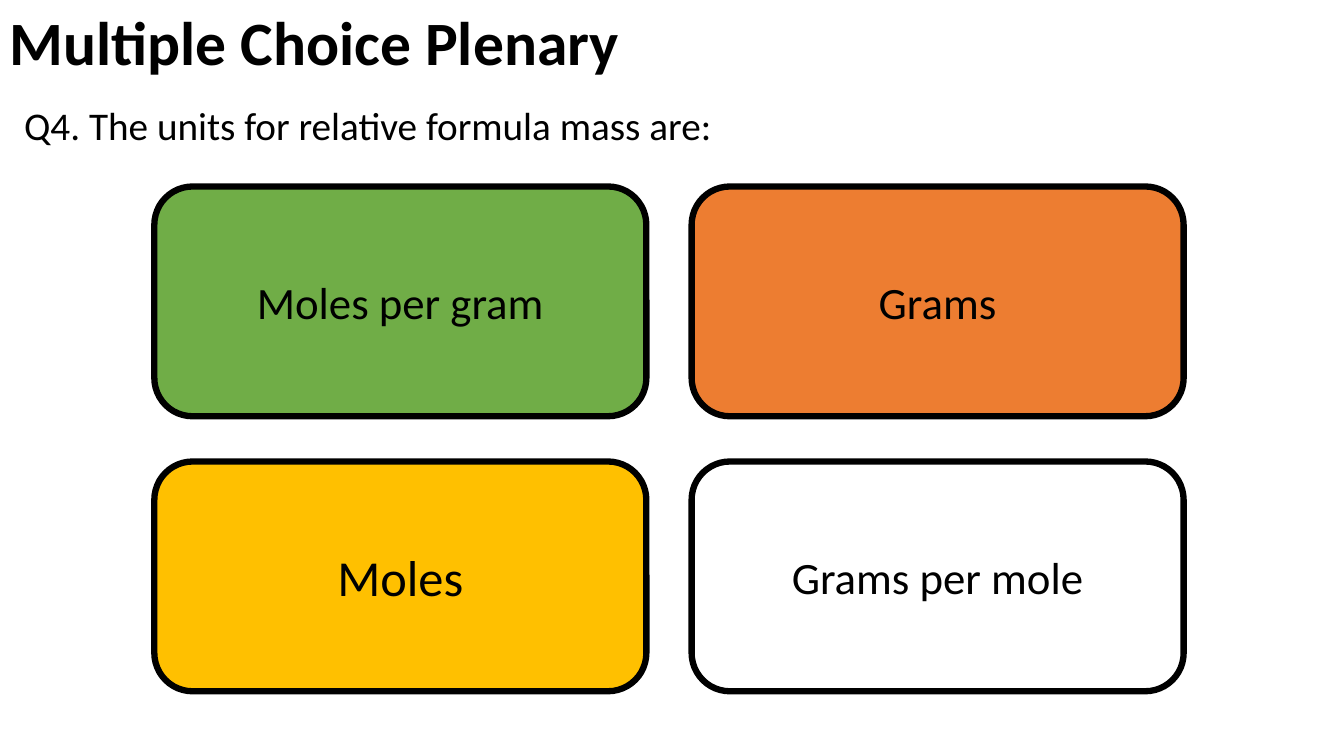
from pptx import Presentation
from pptx.dml.color import RGBColor
from pptx.enum.shapes import MSO_SHAPE
from pptx.enum.text import MSO_ANCHOR, PP_ALIGN
from pptx.util import Cm, Pt

BLACK = RGBColor(0x00, 0x00, 0x00)
WHITE = RGBColor(0xFF, 0xFF, 0xFF)
GREEN = RGBColor(0x70, 0xAD, 0x47)
ORANGE = RGBColor(0xED, 0x7D, 0x31)
GOLD = RGBColor(0xFF, 0xC0, 0x00)

LEFT, TOP = 3.89, 4.7
WIDTH, HEIGHT = 12.4, 5.79
STEP_X, STEP_Y = 13.54, 6.93

ANSWERS = [
    ("Moles per gram", GREEN, 32),
    ("Grams", ORANGE, 32),
    ("Moles", GOLD, 36),
    ("Grams per mole", WHITE, 32),
]


def write(shape, text, size, anchor, bold=False, **layout):
    """Put one styled paragraph in the shape; layout holds paragraph formats."""
    frame = shape.text_frame
    frame.word_wrap = True
    frame.vertical_anchor = anchor
    para = frame.paragraphs[0]
    for name, value in layout.items():
        setattr(para, name, value)
    run = para.add_run()
    run.text = text
    font = {"name": "Calibri", "size": Pt(size), "bold": bold}
    for name, value in font.items():
        setattr(run.font, name, value)
    run.font.color.rgb = BLACK


def add_label(slide, box, text, size, anchor, **layout):
    label = slide.shapes.add_textbox(*map(Cm, box))
    write(label, text, size, anchor, line_spacing=0.9, **layout)


def add_answer(slide, index, text, fill, size):
    """Place an answer card in a grid of two columns."""
    row, col = divmod(index, 2)
    box = (LEFT + col * STEP_X, TOP + row * STEP_Y, WIDTH, HEIGHT)
    card = slide.shapes.add_shape(MSO_SHAPE.ROUNDED_RECTANGLE, *map(Cm, box))
    card.shadow.inherit = False
    card.fill.solid()
    card.fill.fore_color.rgb = fill
    card.line.color.rgb = BLACK
    card.line.width = Pt(4.5)
    write(card, text, size, MSO_ANCHOR.MIDDLE, alignment=PP_ALIGN.CENTER)


def main():
    deck = Presentation()
    deck.slide_width, deck.slide_height = Cm(33.87), Cm(19.05)
    slide = deck.slides.add_slide(deck.slide_layouts[6])
    add_label(slide, (0, 0, 33.87, 2.29), "Multiple Choice Plenary", 44,
              MSO_ANCHOR.MIDDLE, bold=True)
    add_label(slide, (0.36, 2.57, 33.02, 14.6),
              "Q4. The units for relative formula mass are:", 28,
              MSO_ANCHOR.TOP, space_before=Pt(10))
    for index, answer in enumerate(ANSWERS):
        add_answer(slide, index, *answer)
    deck.save("out.pptx")


if __name__ == "__main__":
    main()
